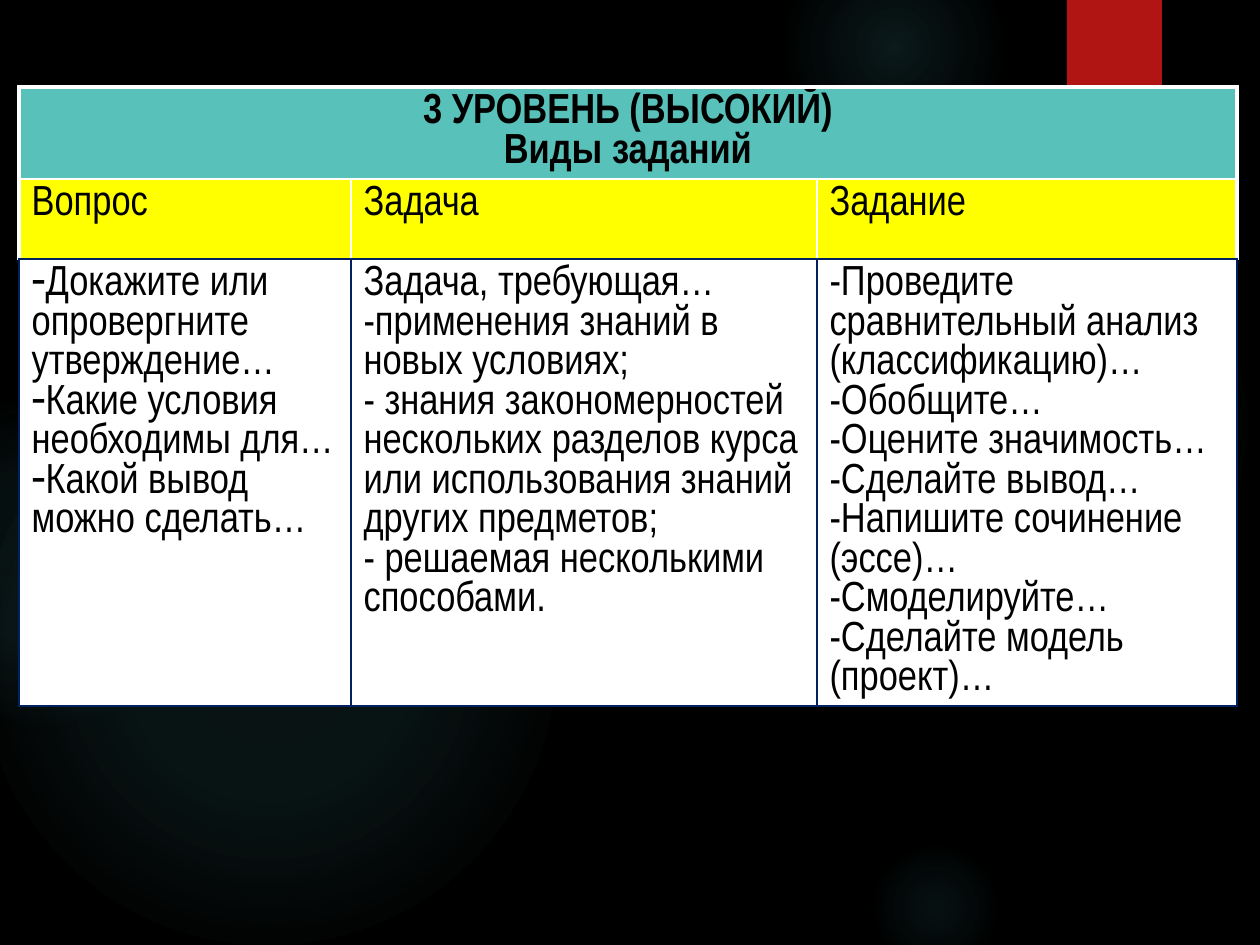
from pptx import Presentation
from pptx.dml.color import RGBColor
from pptx.enum.shapes import MSO_SHAPE
from pptx.enum.text import PP_ALIGN
from pptx.oxml import parse_xml
from pptx.oxml.ns import nsdecls, qn
from pptx.util import Pt
from lxml.etree import SubElement

PX = 7257
C = {"bg": "000000", "glow": "50B9C1", "red": "B01513", "teal": "58C1BA",
     "yellow": "FFFF00", "white": "FFFFFF", "navy": "002060", "text": "000000"}


def write(tf, text, bold=False, align=PP_ALIGN.LEFT, bullet=None):
    for i, line in enumerate(text.split("\n")):
        p = tf.paragraphs[0] if i == 0 else tf.add_paragraph()
        p.alignment = align
        if bullet:
            pPr = p._p.get_or_add_pPr()
            pPr.set("marL", "0")
            pPr.set("indent", "0")
            SubElement(pPr, qn("a:buChar")).set("char", bullet)
        r = p.add_run()
        r.text = line
        r.font.name = "Arial Narrow"
        r.font.size = Pt(24)
        r.font.bold = bold
        r.font.color.rgb = RGBColor.from_string(C["text"])


def border(cell, **sides):
    tcPr = cell._tc.get_or_add_tcPr()
    for side in "LRTB":
        color, width = sides[side]
        tcPr.append(parse_xml(
            f'<a:ln{side} {nsdecls("a")} w="{Pt(width)}"><a:solidFill>'
            f'<a:srgbClr val="{C[color]}"/></a:solidFill></a:ln{side}>'))


prs = Presentation()
prs.slide_width, prs.slide_height = 1260 * PX, 945 * PX
s = prs.slides.add_slide(prs.slide_layouts[6])
s.background.fill.solid()
s.background.fill.fore_color.rgb = RGBColor.from_string(C["bg"])

glows = [(868, 231, 388, (7, 6), 69), (784, -63, 220, (14, 7), 73),
         (868, 840, 136, (9, 5), 66), (-21, 368, 577, (11, 10), 75),
         (-116, 399, 325, (8, 8), 72)]
for x, y, size, (inner, middle), end in glows:
    sp = s.shapes.add_shape(MSO_SHAPE.OVAL, x * PX, y * PX, size * PX, size * PX)
    sp.shadow.inherit = False
    sp.line.fill.background()
    sp.fill.background()
    stops = "".join(
        f'<a:gs pos="{pos * 1000}"><a:srgbClr val="{C["glow"]}">'
        f'<a:alpha val="{alpha * 1000}"/></a:srgbClr></a:gs>'
        for pos, alpha in ((0, inner), (36, middle), (end, 0)))
    spPr = sp._element.spPr
    spPr.replace(spPr.find(qn("a:noFill")), parse_xml(
        f'<a:gradFill {nsdecls("a")}><a:gsLst>{stops}</a:gsLst><a:path path="circle">'
        '<a:fillToRect l="50000" t="50000" r="50000" b="50000"/></a:path></a:gradFill>'))

sp = s.shapes.add_shape(MSO_SHAPE.RECTANGLE, 1067 * PX, 0, 95 * PX, 151 * PX)
sp.shadow.inherit = False
sp.line.fill.background()
sp.fill.solid()
sp.fill.fore_color.rgb = RGBColor.from_string(C["red"])

rows = [
    ["3 УРОВЕНЬ (ВЫСОКИЙ)\nВиды заданий", "", ""],
    ["Вопрос", "Задача", "Задание"],
    ["Докажите или опровергните утверждение…\nКакие условия необходимы для…\n"
     "Какой вывод можно сделать…",
     "Задача, требующая…\n-применения знаний в новых условиях;\n"
     "- знания закономерностей нескольких разделов курса или использования "
     "знаний других предметов;\n- решаемая несколькими способами.",
     "-Проведите сравнительный анализ (классификацию)…\n-Обобщите…\n"
     "-Оцените значимость…\n-Сделайте вывод…\n-Напишите сочинение (эссе)…\n"
     "-Смоделируйте…\n-Сделайте модель (проект)…"],
]
widths, heights = [332, 466, 420], [92, 80, 447]
tbl = s.shapes.add_table(3, 3, 19 * PX, 87 * PX, sum(widths) * PX, sum(heights) * PX).table
for col, w in zip(tbl.columns, widths):
    col.width = w * PX
for row, h in zip(tbl.rows, heights):
    row.height = h * PX
tbl.cell(0, 0).merge(tbl.cell(0, 2))

thick, thin, navy = ("white", 2.25), ("white", 1), ("navy", 1)
for i, texts in enumerate(rows):
    for j, text in enumerate(texts):
        cell = tbl.cell(i, j)
        if i == 2:
            border(cell, L=navy, R=navy, T=navy, B=navy)
        else:
            border(cell, L=thick if j == 0 else thin,
                   R=thick if j == 2 or i == 0 else thin,
                   T=thick if i == 0 else thin, B=thin if i == 0 else navy)
        cell.fill.solid()
        cell.fill.fore_color.rgb = RGBColor.from_string(C[("teal", "yellow", "white")[i]])
        if text:
            write(cell.text_frame, text, bold=i == 0,
                  align=PP_ALIGN.CENTER if i == 0 else PP_ALIGN.LEFT,
                  bullet="-" if (i, j) == (2, 0) else None)

prs.save("out.pptx")
